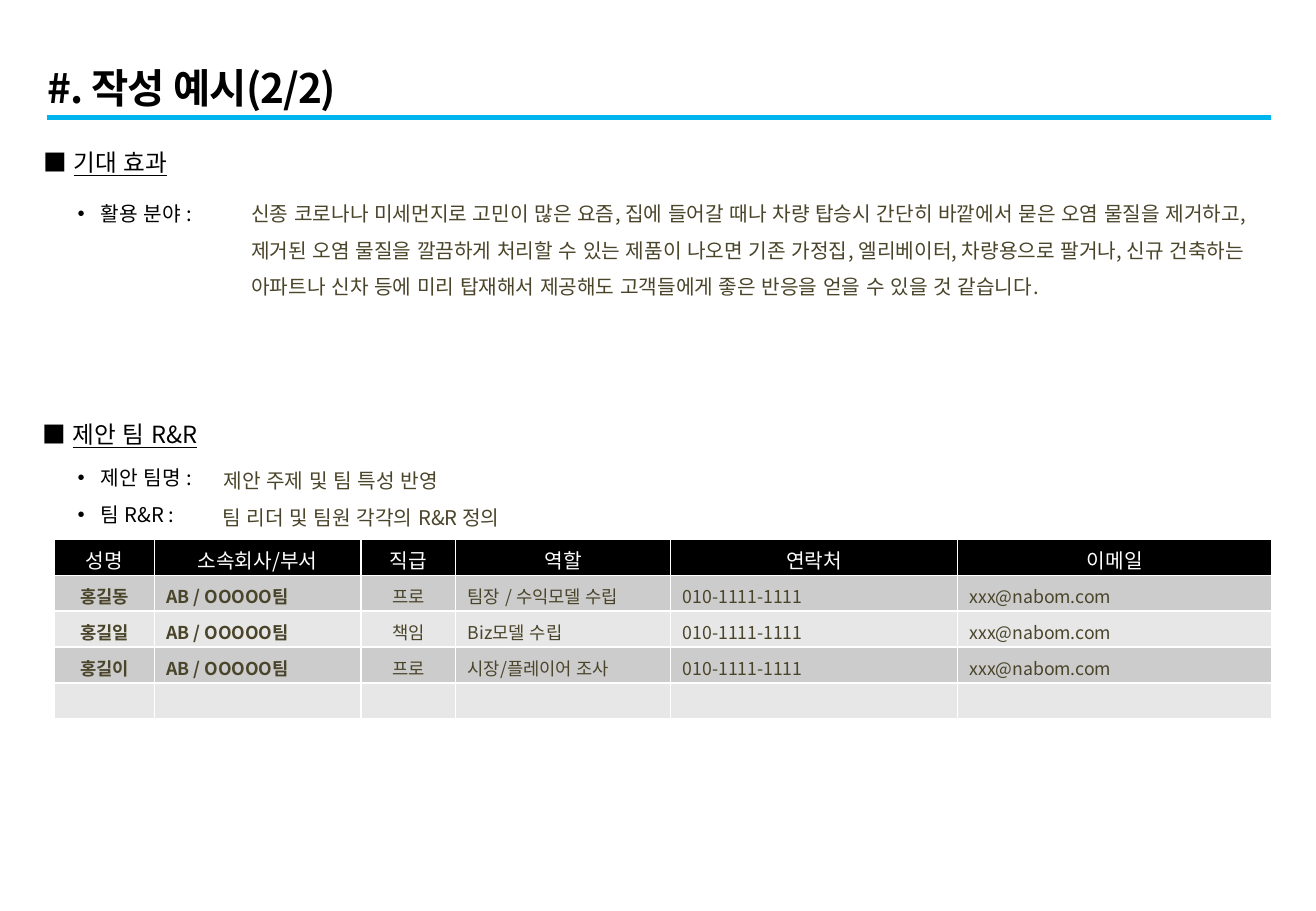
from lxml import etree
from pptx import Presentation
from pptx.dml.color import RGBColor
from pptx.enum import lang, shapes, text
from pptx.oxml import ns
from pptx.util import Inches, Pt

FONT = "Noto Sans CJK KR"
BLACK = RGBColor(0x00, 0x00, 0x00)
WHITE = RGBColor(0xFF, 0xFF, 0xFF)
CYAN = RGBColor(0x00, 0xB4, 0xED)
OLIVE = RGBColor(0x4A, 0x45, 0x2A)
DARK_BAND = RGBColor(0xCC, 0xCC, 0xCC)
LIGHT_BAND = RGBColor(0xE7, 0xE7, 0xE7)

USAGE = (
    "신종 코로나나 미세먼지로 고민이 많은 요즘, 집에 들어갈 때나 차량 탑승시 간단히 "
    "바깥에서 묻은 오염 물질을 제거하고, 제거된 오염 물질을 깔끔하게 처리할 수 있는 "
    "제품이 나오면 기존 가정집, 엘리베이터, 차량용으로 팔거나, 신규 건축하는 아파트나 "
    "신차 등에 미리 탑재해서 제공해도 고객들에게 좋은 반응을 얻을 수 있을 것 같습니다."
)
HEADERS = ["성명", "소속회사/부서", "직급", "역할", "연락처", "이메일"]
COL_WIDTHS = [0.82, 1.7, 0.78, 1.77, 2.36, 2.59]
CENTERED_COLS = (0, 2)
BOLD_COLS = (0, 1)
DEPT, PHONE, EMAIL = "AB / OOOOO팀", "010-1111-1111", "xxx@nabom.com"
MEMBERS = [
    ["홍길동", DEPT, "프로", "팀장 / 수익모델 수립", PHONE, EMAIL],
    ["홍길일", DEPT, "책임", "Biz모델 수립", PHONE, EMAIL],
    ["홍길이", DEPT, "프로", "시장/플레이어 조사", PHONE, EMAIL],
    [""] * len(HEADERS),
]


def add_run(p, words, size, color, bold=False, underline=False):
    r = p.add_run()
    r.text = words
    font = r.font
    font.name, font.size, font.bold = FONT, Pt(size), bold
    font.color.rgb = color
    font.language_id = lang.MSO_LANGUAGE_ID.KOREAN
    if underline:
        font.underline = True
    east_asian = etree.SubElement(r._r.get_or_add_rPr(), ns.qn("a:ea"))
    east_asian.set("typeface", FONT)
    return r


def add_box(slide, left, top, width, height):
    """Add a wrapping text box and return its first paragraph."""
    box = slide.shapes.add_textbox(
        Inches(left), Inches(top), Inches(width), Inches(height))
    box.text_frame.word_wrap = True
    return box.text_frame.paragraphs[0]


def add_title(slide, left, top, width, height):
    p = add_box(slide, left, top, width, height)
    tf = slide.shapes[-1].text_frame
    tf.margin_left = tf.margin_top = tf.margin_right = tf.margin_bottom = 0
    tf.vertical_anchor = text.MSO_ANCHOR.MIDDLE
    r = add_run(p, "#. 작성 예시(2/2)", 24, BLACK, bold=True)
    r._r.get_or_add_rPr().set("spc", "-70")

    y = Inches(top + height - 0.01)
    rule = slide.shapes.add_connector(
        shapes.MSO_CONNECTOR.STRAIGHT, Inches(left), y, Inches(left + width), y)
    rule.line.color.rgb = CYAN
    rule.line.width = Pt(3)
    etree.SubElement(rule._element.spPr, ns.qn("a:effectLst"))


def add_heading(slide, words, left, top, width):
    p = add_box(slide, left, top, width, 0.34)
    add_run(p, "■ ", 14, BLACK)
    add_run(p, words, 14, BLACK, underline=True)


def add_label(slide, words, left, top, width):
    """Add a bulleted label."""
    p = add_box(slide, left, top, width, 0.4)
    p.line_spacing = 1.5
    pPr = p._p.get_or_add_pPr()
    pPr.set("marL", str(Inches(0.19)))
    pPr.set("indent", str(Inches(-0.19)))
    etree.SubElement(pPr, ns.qn("a:buFont")).set("typeface", "Arial")
    etree.SubElement(pPr, ns.qn("a:buChar")).set("char", "•")
    add_run(p, words, 12, BLACK)


def add_body(slide, words, left, top, width, height=0.4):
    p = add_box(slide, left, top, width, height)
    p.line_spacing = 1.5
    add_run(p, words, 12, OLIVE)


def set_borders(cell):
    tcPr = cell._tc.get_or_add_tcPr()
    for i, side in enumerate(("lnL", "lnR", "lnT", "lnB")):
        ln = etree.Element(ns.qn("a:" + side), w=str(Pt(1)))
        fill = etree.SubElement(ln, ns.qn("a:solidFill"))
        etree.SubElement(fill, ns.qn("a:srgbClr")).set("val", str(WHITE))
        tcPr.insert(i, ln)


def fill_cell(cell, words, fill, size, color, bold, centered):
    cell.fill.solid()
    cell.fill.fore_color.rgb = fill
    set_borders(cell)
    cell.margin_top, cell.margin_bottom = Inches(0.04), 0
    cell.vertical_anchor = text.MSO_ANCHOR.MIDDLE
    p = cell.text_frame.paragraphs[0]
    if centered:
        p.alignment = text.PP_ALIGN.CENTER
    if words:
        add_run(p, words, size, color, bold)
    else:
        etree.SubElement(p._p, ns.qn("a:endParaRPr")).set("sz", str(int(size * 100)))


def add_team_table(slide, left, top, width, height):
    table = slide.shapes.add_table(
        len(MEMBERS) + 1, len(HEADERS),
        Inches(left), Inches(top), Inches(width), Inches(height)).table
    for column, col_width in zip(table.columns, COL_WIDTHS):
        column.width = Inches(col_width)
    for c, words in enumerate(HEADERS):
        fill_cell(table.cell(0, c), words, BLACK, 12, WHITE, False, True)
    for r, member in enumerate(MEMBERS, 1):
        band = DARK_BAND if r % 2 else LIGHT_BAND
        for c, words in enumerate(member):
            fill_cell(table.cell(r, c), words, band, 10.5, OLIVE,
                      c in BOLD_COLS, c in CENTERED_COLS)


def add_effects(slide, left, top):
    add_heading(slide, "기대 효과", left, top, 5.96)
    add_label(slide, "활용 분야 :", left + 0.28, top + 0.34, 1.53)
    add_body(slide, USAGE, left + 1.71, top + 0.34, 8.49, 1.31)


def add_team(slide, left, top):
    add_heading(slide, "제안 팀 R&R", left, top, 2.3)
    add_label(slide, "제안 팀명 :", left + 0.29, top + 0.27, 1.24)
    add_body(slide, "제안 주제 및 팀 특성 반영", left + 1.49, top + 0.3, 8.61)
    add_label(slide, "팀 R&R :", left + 0.29, top + 0.58, 1.24)
    add_body(slide, "팀 리더 및 팀원 각각의 R&R 정의", left + 1.48, top + 0.6, 8.61)
    add_team_table(slide, left + 0.2, top + 1.03, sum(COL_WIDTHS), 1.48)


def main():
    prs = Presentation()
    prs.slide_width, prs.slide_height = Inches(10.83), Inches(7.5)
    slide = prs.slides.add_slide(prs.slide_layouts[6])
    add_title(slide, 0.39, 0.45, 10.07, 0.53)
    add_effects(slide, 0.26, 1.17)
    add_team(slide, 0.25, 3.41)
    prs.save("out.pptx")


if __name__ == "__main__":
    main()
